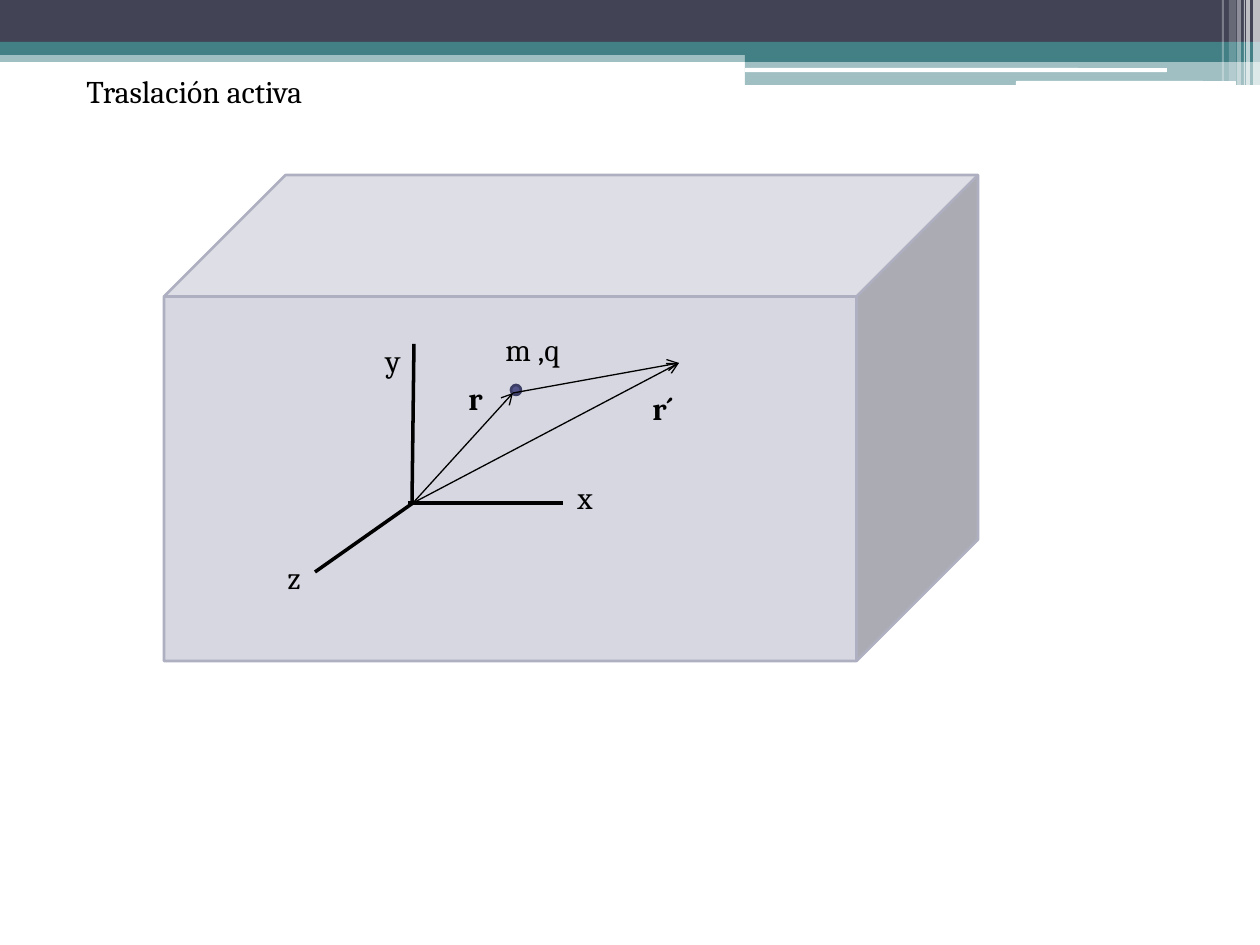
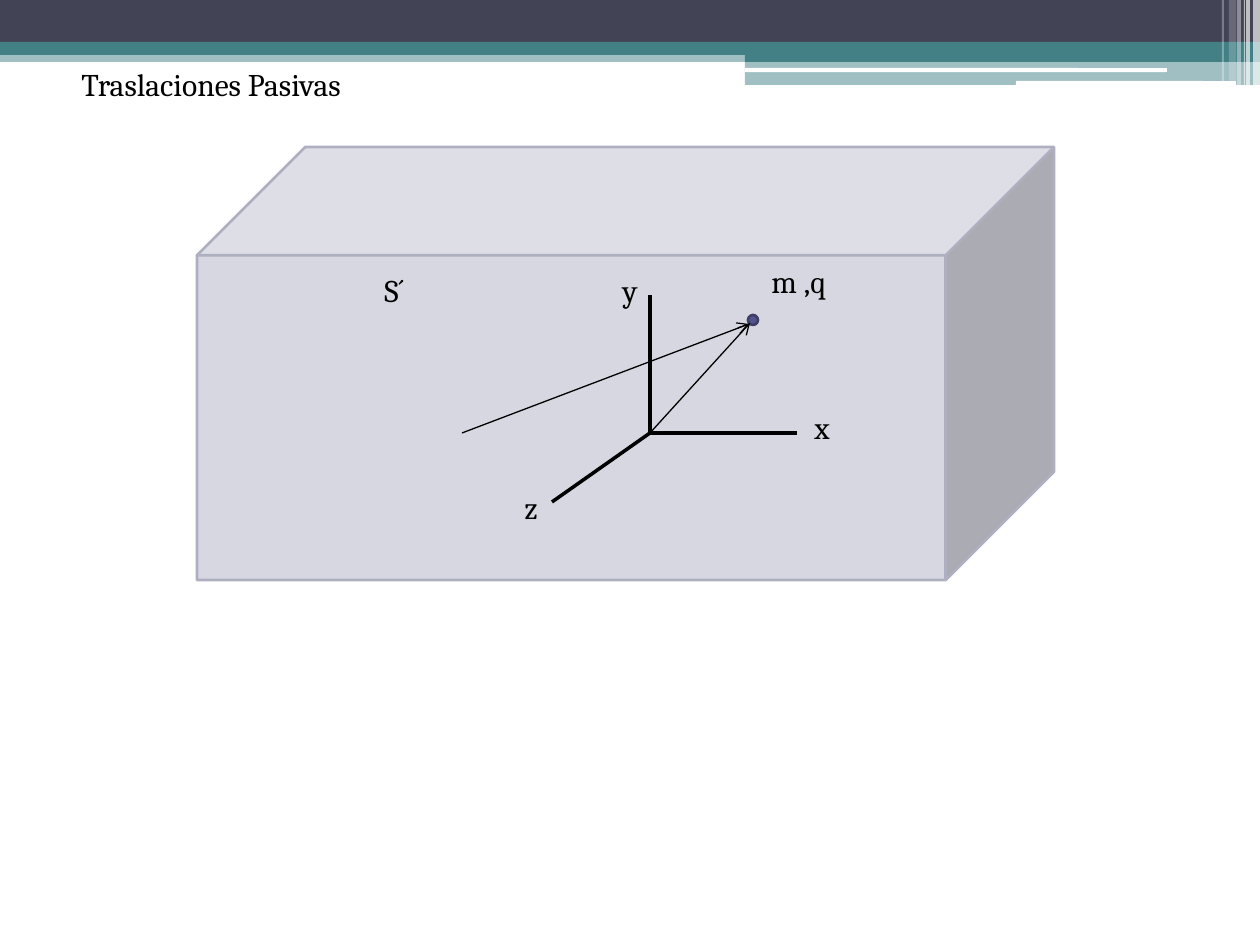
from lxml.etree import SubElement
from pptx import Presentation
from pptx.dml.color import RGBColor
from pptx.enum.shapes import MSO_CONNECTOR, MSO_SHAPE as SHAPE
from pptx.oxml.ns import qn
from pptx.util import Pt

PX = 914400 / 126
WIDTH, HEIGHT = 1260, 945
FONT = "Cambria"
TEXT_SIZE = 18
LABEL_HEIGHT = 50

BLACK = RGBColor(0x00, 0x00, 0x00)
WHITE = RGBColor(0xFF, 0xFF, 0xFF)
SLATE = RGBColor(0x42, 0x44, 0x56)
TEAL = RGBColor(0x43, 0x80, 0x86)
BOX_FILL = RGBColor(0xD6, 0xD7, 0xE0)
BOX_LINE = RGBColor(0xAE, 0xB0, 0xC1)
PARTICLE_FILL = RGBColor(0x53, 0x54, 0x8A)
PARTICLE_LINE = RGBColor(0x3D, 0x3E, 0x66)

# kind, (left, top, width, height), colour, opacity in percent
BANDS = [
    (SHAPE.RECTANGLE, (0, 50, WIDTH, 12), TEAL, 50),
    (SHAPE.RECTANGLE, (0, 0, WIDTH, 42), SLATE, 100),
    (SHAPE.RECTANGLE, (0, 42, WIDTH, 13), TEAL, 100),
    (SHAPE.RECTANGLE, (745, 49, 515, 13), TEAL, 100),
    (SHAPE.RECTANGLE, (745, 62, 515, 23), TEAL, 50),
    (SHAPE.ROUNDED_RECTANGLE, (745, 68, 422, 4), WHITE, 100),
    (SHAPE.ROUNDED_RECTANGLE, (1016, 81, 220, 5), WHITE, 100),
]
# left, width, height, opacity in percent
CORNER_STRIPES = [
    (1253, 7, 85, 65), (1246, 4, 85, 65), (1244, 1, 85, 60),
    (1237, 4, 85, 40), (1229, 7, 81, 20), (1222, 2, 81, 30),
]


def emu(*lengths):
    return [round(length * PX) for length in lengths]


def add_filled(slide, kind, box, color, line_color=None, opacity=100):
    shape = slide.shapes.add_shape(kind, *emu(*box))
    shape.shadow.inherit = False
    shape.fill.solid()
    shape.fill.fore_color.rgb = color
    if opacity < 100:
        color_element = shape.element.spPr.find(qn("a:solidFill"))[0]
        SubElement(color_element, qn("a:alpha"), val=str(opacity * 1000))
    if line_color is None:
        shape.line.fill.background()
    else:
        shape.line.color.rgb = line_color
        shape.line.width = Pt(1.5)
    return shape


def add_line(slide, start, end, width=2, arrow=False):
    connector = slide.shapes.add_connector(
        MSO_CONNECTOR.STRAIGHT, *emu(*start, *end))
    connector.line.color.rgb = BLACK
    connector.line.width = Pt(width)
    if arrow:
        SubElement(connector.line._get_or_add_ln(), qn("a:tailEnd"), type="arrow")
    SubElement(connector.element.spPr, qn("a:effectLst"))


def add_vector(slide, start, end):
    add_line(slide, start, end, width=0.75, arrow=True)


def add_label(slide, text, position, width=40, bold=False):
    box = slide.shapes.add_textbox(*emu(*position, width, LABEL_HEIGHT))
    box.text_frame.word_wrap = True
    box.text_frame.text = text
    font = box.text_frame.paragraphs[0].runs[0].font
    font.name, font.size, font.bold = FONT, Pt(TEXT_SIZE), bold
    font.color.rgb = BLACK


def add_bands_to_layout(slide):
    """Draw the header bands and move them to the slide's layout."""
    stripes = [(SHAPE.RECTANGLE, (left, 0, width, height), WHITE, opacity)
               for left, width, height, opacity in CORNER_STRIPES]
    for kind, box, color, opacity in BANDS + stripes:
        band = add_filled(slide, kind, box, color, opacity=opacity)
        slide.slide_layout.shapes.element.append(band.element)


def add_space_box(slide, box):
    add_filled(slide, SHAPE.CUBE, box, BOX_FILL, BOX_LINE)


def offset_from(origin):
    """Return a function that places an offset relative to origin."""
    return lambda x, y: (origin[0] + x, origin[1] + y)


def add_frame_with_particle(slide, origin, x_axis, y_axis, mass_label):
    """Draw axes and particle; each axis is a pair of offsets from origin."""
    at = offset_from(origin)
    for start, end in (x_axis, y_axis, ((0, 0), (-98, 69))):
        add_line(slide, at(*start), at(*end))
    add_filled(slide, SHAPE.FLOWCHART_CONNECTOR, (*at(98, -118), 10, 10),
               PARTICLE_FILL, PARTICLE_LINE)
    add_label(slide, "x", at(152, -31))
    add_label(slide, "y", at(-40, -168))
    add_label(slide, "z", at(-138, 49))
    add_label(slide, "m ,q", at(*mass_label), 120)
    add_vector(slide, origin, at(100, -110))


def build_active_translation(slide, box):
    add_space_box(slide, box)
    add_label(slide, "Traslación activa", (74, 66), 610)
    origin = offset_from(box)(249, 328)
    at = offset_from(origin)
    add_frame_with_particle(slide, origin, ((-5, 0), (150, 0)),
                            ((-1, 1), (1, -159)), mass_label=(80, -179))
    particle, moved = at(100, -110), at(266, -140)
    add_vector(slide, origin, moved)
    add_vector(slide, particle, moved)
    add_label(slide, "r", at(43, -130), bold=True)
    add_label(slide, "r´", at(227, -120), 59, bold=True)


def build_passive_translation(slide, box):
    add_label(slide, "Traslaciones Pasivas", (69, 59), 532)
    add_space_box(slide, box)
    origin = offset_from(box)(453, 286)
    at = offset_from(origin)
    add_frame_with_particle(slide, origin, ((0, 0), (147, 0)),
                            ((0, 0), (0, -138)), mass_label=(109, -177))
    add_vector(slide, at(-188, 0), at(99, -109))
    add_label(slide, "S´", at(-278, -168), 79)


def main():
    presentation = Presentation()
    presentation.slide_width, presentation.slide_height = emu(WIDTH, HEIGHT)
    blank = presentation.slide_layouts[6]
    active = presentation.slides.add_slide(blank)
    passive = presentation.slides.add_slide(blank)
    add_bands_to_layout(active)
    build_active_translation(active, (164, 175, 814, 486))
    build_passive_translation(passive, (197, 147, 857, 433))
    presentation.save("out.pptx")


if __name__ == "__main__":
    main()
